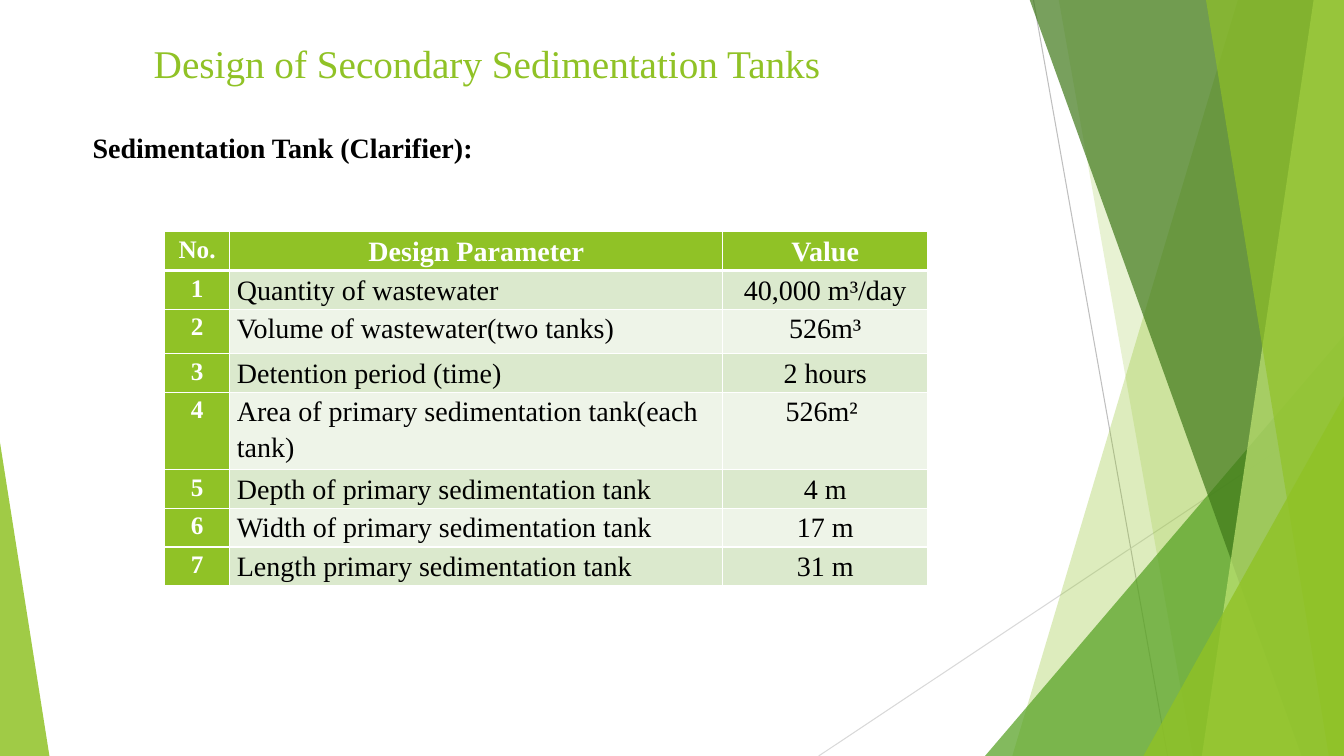
"""Build the slide on the design of secondary sedimentation tanks."""
from dataclasses import dataclass
from typing import Optional, Union

from lxml.etree import SubElement
from pptx import Presentation
from pptx.dml.color import RGBColor
from pptx.enum.shapes import MSO_CONNECTOR, MSO_SHAPE
from pptx.enum.text import MSO_ANCHOR, PP_ALIGN
from pptx.oxml.ns import qn
from pptx.util import Inches, Pt

FONT = "Times New Roman"
COLORS = {
    "green": "90C226", "leaf": "54A021", "forest": "3F7819", "lime": "C0E474",
    "band": "DBE9CD", "pale": "EEF4E8", "white": "FFFFFF", "black": "000000",
    "gray": "BFBFBF", "light_gray": "D9D9D9",
}
WIDTH, HEIGHT, TOP = 13.33, 7.5, -0.01


@dataclass
class Ray:
    start: tuple[float, float]
    end: tuple[float, float]
    color: str


@dataclass
class Band:
    top_left: float
    bottom_left: float
    color: str
    opacity: int


@dataclass
class Triangle:
    left: float
    top: float
    width: float
    apex: float
    color: str
    opacity: int


@dataclass
class Parameter:
    name: str
    value: str
    height: float = 0.38


RAYS = [
    Ray((10.25, 0), (11.58, HEIGHT), "gray"),
    Ray((WIDTH, 4.03), (8.12, HEIGHT), "light_gray"),
]
FACETS: list[Union[Band, Triangle]] = [
    Band(12.28, 10.04, "green", 30),
    Band(10.5, 11.83, "green", 20),
    Triangle(9.77, 3.33, 3.56, 1, "leaf", 72),
    Band(10.21, 12.91, "forest", 70),
    Band(13.03, 11.92, "lime", 70),
    Band(11.96, 13.18, "green", 65),
    Triangle(11.34, 3.93, 1.99, 1, "green", 80),
    Triangle(0, 4.39, 0.49, 0, "green", 85),
]
COLUMN_WIDTHS = [0.65, 4.89, 2.03]
HEADER = Parameter("Design Parameter", "Value")
PARAMETERS = [
    Parameter("Quantity of wastewater", "40,000 m³/day"),
    Parameter("Volume of wastewater(two tanks)", "526m³", 0.44),
    Parameter("Detention period (time)", "2 hours"),
    Parameter("Area of primary sedimentation tank(each tank)", "526m² ", 0.72),
    Parameter("Depth of primary sedimentation tank", "4 m"),
    Parameter("Width of primary sedimentation tank", "17 m"),
    Parameter("Length primary sedimentation tank", "31 m"),
]


def rgb(name: str) -> RGBColor:
    return RGBColor.from_string(COLORS[name])


def write_text(text_frame, text: str, *, size: float, color: str = "black",
               bold: bool = False, align=PP_ALIGN.LEFT,
               line_spacing: Optional[float] = None) -> None:
    text_frame.word_wrap = True
    paragraph = text_frame.paragraphs[0]
    paragraph.alignment = align
    paragraph.line_spacing = line_spacing
    run = paragraph.add_run()
    run.text = text
    run.font.name = FONT
    run.font.size = Pt(size)
    run.font.bold = bold
    run.font.color.rgb = rgb(color)


def add_ray(slide, ray: Ray) -> None:
    connector = slide.shapes.add_connector(
        MSO_CONNECTOR.STRAIGHT, *map(Inches, ray.start + ray.end))
    connector.line.color.rgb = rgb(ray.color)
    connector.line.width = Pt(0.75)
    SubElement(connector._element.spPr, qn("a:effectLst"))


def add_facet(slide, facet: Union[Band, Triangle]) -> None:
    if isinstance(facet, Band):
        builder = slide.shapes.build_freeform(Inches(facet.top_left), Inches(TOP))
        corners = [(WIDTH, TOP), (WIDTH, HEIGHT), (facet.bottom_left, HEIGHT)]
        builder.add_line_segments([(Inches(x), Inches(y)) for x, y in corners])
        shape = builder.convert_to_shape()
    else:
        shape = slide.shapes.add_shape(
            MSO_SHAPE.ISOSCELES_TRIANGLE, Inches(facet.left), Inches(facet.top),
            Inches(facet.width), Inches(HEIGHT - facet.top))
        shape.adjustments[0] = facet.apex
    shape.shadow.inherit = False
    shape.line.fill.background()
    shape.fill.solid()
    shape.fill.fore_color.rgb = rgb(facet.color)
    color_element = shape._element.spPr.find(qn("a:solidFill"))[0]
    SubElement(color_element, qn("a:alpha"), val=str(facet.opacity * 1000))


def add_text_box(slide, left: float, top: float, width: float, height: float,
                 text: str, **text_format) -> None:
    box = slide.shapes.add_textbox(*map(Inches, (left, top, width, height)))
    box.text_frame.vertical_anchor = MSO_ANCHOR.MIDDLE
    write_text(box.text_frame, text, **text_format)


def set_borders(cell, row: int) -> None:
    properties = cell._tc.get_or_add_tcPr()
    for side in "LRTB":
        thick = (row, side) in ((0, "B"), (1, "T"))
        line = SubElement(properties, qn(f"a:ln{side}"), w=str(Pt(3 if thick else 1)))
        fill = SubElement(line, qn("a:solidFill"))
        SubElement(fill, qn("a:srgbClr"), val=COLORS["white"])


def add_parameter_table(slide, left: float, top: float) -> None:
    rows = [HEADER] + PARAMETERS
    table = slide.shapes.add_table(
        len(rows), len(COLUMN_WIDTHS), Inches(left), Inches(top),
        Inches(sum(COLUMN_WIDTHS)), Inches(sum(row.height for row in rows))).table
    table.horz_banding = False
    for column, width in zip(table.columns, COLUMN_WIDTHS):
        column.width = Inches(width)
    for row, parameter in enumerate(rows):
        table.rows[row].height = Inches(parameter.height)
        texts = (str(row) if row else "No.", parameter.name, parameter.value)
        for column, text in enumerate(texts):
            cell = table.cell(row, column)
            heading = row == 0 or column == 0
            cell.margin_left = cell.margin_right = Inches(0.07)
            cell.margin_top = cell.margin_bottom = 0
            set_borders(cell, row)
            cell.fill.solid()
            body_color = "band" if row % 2 else "pale"
            cell.fill.fore_color.rgb = rgb("green" if heading else body_color)
            write_text(
                cell.text_frame, text, size=20 if column else 18, bold=heading,
                color="white" if heading else "black", line_spacing=1.15,
                align=PP_ALIGN.LEFT if row and column == 1 else PP_ALIGN.CENTER)


def main() -> None:
    presentation = Presentation()
    presentation.slide_width = Inches(WIDTH)
    presentation.slide_height = Inches(HEIGHT)
    slide = presentation.slides.add_slide(presentation.slide_layouts[6])
    for ray in RAYS:
        add_ray(slide, ray)
    for facet in FACETS:
        add_facet(slide, facet)
    add_text_box(slide, 1.33, 0.33, 9.44, 0.58,
                 " Design of Secondary Sedimentation Tanks", size=28, color="green")
    add_parameter_table(slide, 1.63, 2.3)
    add_text_box(slide, 0.82, 1.24, 4.89, 0.44,
                 "Sedimentation Tank (Clarifier):", size=20, bold=True)
    presentation.save("out.pptx")


if __name__ == "__main__":
    main()
